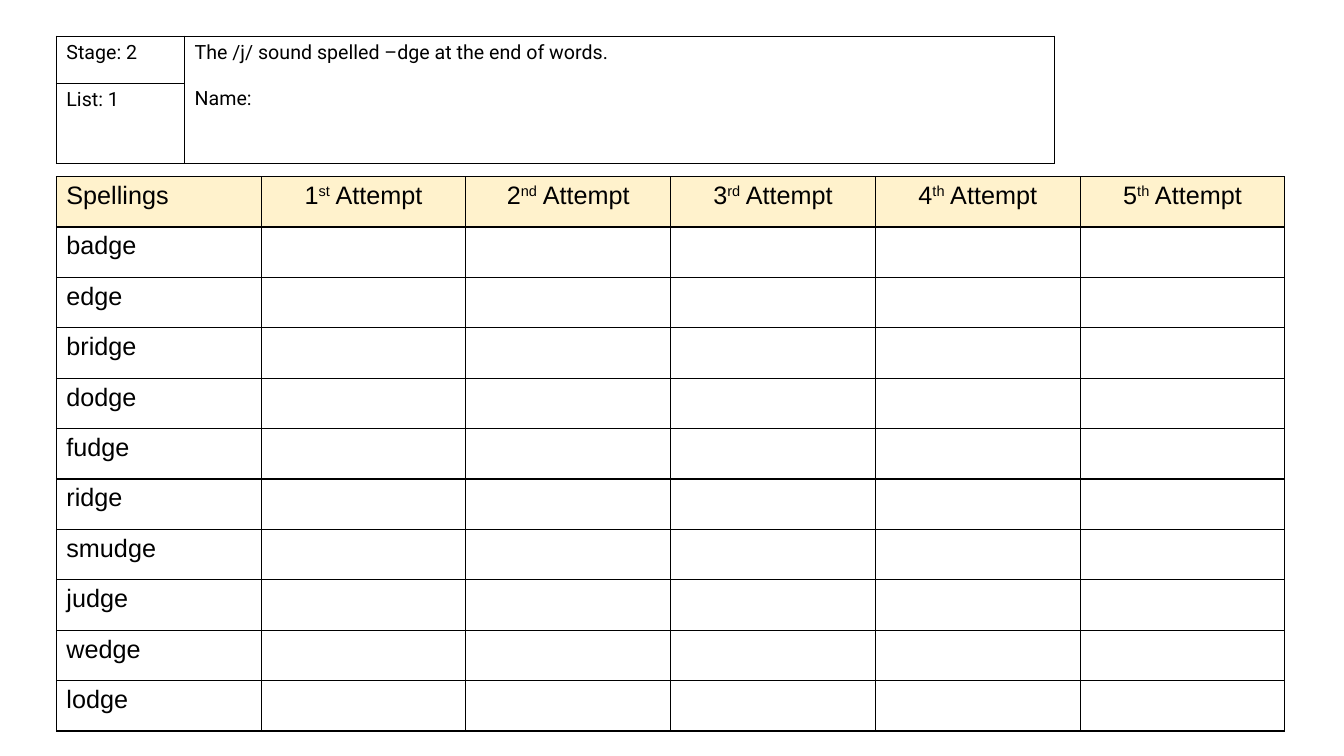
import lxml.etree
import pptx
import pptx.dml.color
import pptx.enum.text
import pptx.oxml
import pptx.oxml.ns
import pptx.util

Cm = pptx.util.Cm
Pt = pptx.util.Pt
Align = pptx.enum.text.PP_ALIGN

BLACK = pptx.dml.color.RGBColor(0x00, 0x00, 0x00)
CREAM = pptx.dml.color.RGBColor(0xFF, 0xF2, 0xCC)

STAGE = "Stage: 2"
LIST = "List: 1"
RULE = "The /j/ sound spelled –dge at the end of words."
NAME = "Name:"
SPELLINGS_HEADING = "Spellings"
ORDINALS = [("1", "st"), ("2", "nd"), ("3", "rd"), ("4", "th"), ("5", "th")]
WORDS = ["badge", "edge", "bridge", "dodge", "fudge",
         "ridge", "smudge", "judge", "wedge", "lodge"]

LEFT = Cm(1.42)
HEADER_TOP = Cm(0.91)
HEADER_COLUMNS = [Cm(3.23), Cm(21.92)]
HEADER_ROWS = [Cm(1.19), Cm(2.02)]
GRID_TOP = Cm(4.45)
GRID_COLUMNS = [Cm(5.16)] * (len(ORDINALS) + 1)
GRID_ROWS = [Cm(1.27)] * (len(WORDS) + 1)


def write(paragraph, text, font="Arial", size=18, align=Align.LEFT, superscript=False):
    paragraph.alignment = align
    run = paragraph.add_run()
    run.text = text
    run.font.name = font
    run.font.size = Pt(size)
    run.font.color.rgb = BLACK
    if superscript:
        run.font._element.set("baseline", "30000")


def draw_borders(cell):
    properties = cell._tc.get_or_add_tcPr()
    for index, side in enumerate(("lnL", "lnR", "lnT", "lnB")):
        border = pptx.oxml.parse_xml(
            f'<a:{side} {pptx.oxml.ns.nsdecls("a")} w="12700"><a:solidFill>'
            f'<a:srgbClr val="{BLACK}"/></a:solidFill></a:{side}>')
        properties.insert(index, border)


def add_bordered_table(slide, top, columns, rows):
    frame = slide.shapes.add_table(
        len(rows), len(columns), LEFT, top, sum(columns), sum(rows))
    table = frame.table
    table.first_row = False
    table.horz_banding = False
    for column, width in zip(table.columns, columns):
        column.width = width
    for row, height in zip(table.rows, rows):
        row.height = height
    for cell in table.iter_cells():
        cell.fill.background()
        draw_borders(cell)
    return table


def build_grid(slide):
    table = add_bordered_table(slide, GRID_TOP, GRID_COLUMNS, GRID_ROWS)
    for cell in table.rows[0].cells:
        cell.fill.solid()
        cell.fill.fore_color.rgb = CREAM
    for row, word in enumerate([SPELLINGS_HEADING] + WORDS):
        write(table.cell(row, 0).text_frame.paragraphs[0], word)
    for column, (number, suffix) in enumerate(ORDINALS, start=1):
        paragraph = table.cell(0, column).text_frame.paragraphs[0]
        write(paragraph, number, align=Align.CENTER)
        write(paragraph, suffix, align=Align.CENTER, superscript=True)
        write(paragraph, " Attempt", align=Align.CENTER)


def build_header(slide):
    table = add_bordered_table(slide, HEADER_TOP, HEADER_COLUMNS, HEADER_ROWS)
    table.cell(0, 1).merge(table.cell(1, 1))
    rule_frame = table.cell(0, 1).text_frame
    name_paragraph = rule_frame.add_paragraph()
    name_paragraph.space_before = Pt(16.4)
    for paragraph, text in (
        (table.cell(0, 0).text_frame.paragraphs[0], STAGE),
        (table.cell(1, 0).text_frame.paragraphs[0], LIST),
        (rule_frame.paragraphs[0], RULE),
        (name_paragraph, NAME),
    ):
        write(paragraph, text, font="Roboto", size=14)


def main():
    presentation = pptx.Presentation()
    presentation.slide_width = Cm(33.87)
    presentation.slide_height = Cm(19.05)
    slide = presentation.slides.add_slide(presentation.slide_layouts[6])
    build_grid(slide)
    build_header(slide)
    presentation.save("out.pptx")


if __name__ == "__main__":
    main()
